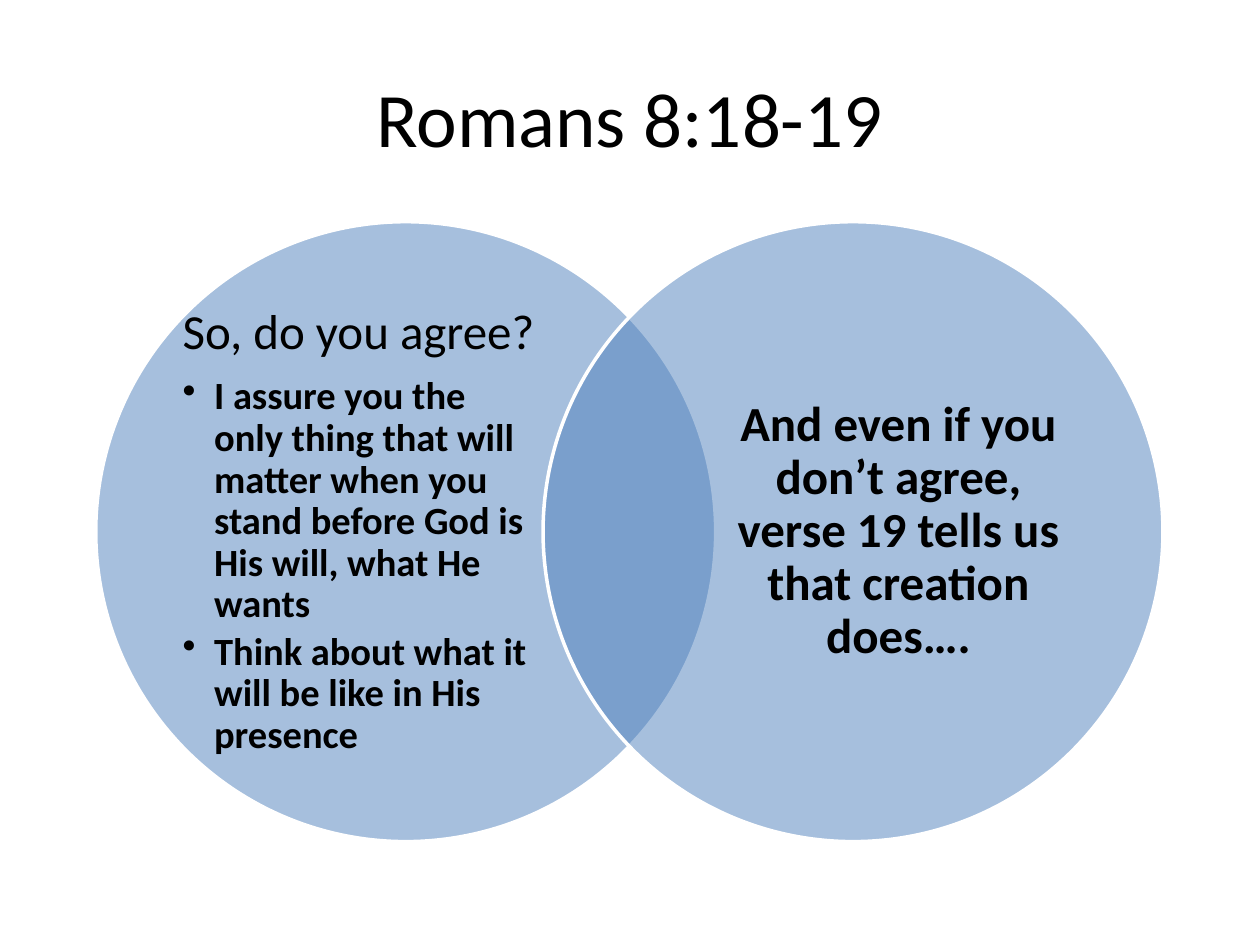
"""Build a slide with a two-circle Venn diagram on Romans 8:18-19."""
from lxml import etree
from pptx import Presentation
from pptx.dml.color import RGBColor
from pptx.enum.shapes import MSO_SHAPE
from pptx.enum.text import MSO_ANCHOR, PP_ALIGN
from pptx.oxml.ns import qn
from pptx.util import Pt

OVAL = MSO_SHAPE.OVAL
MIDDLE = MSO_ANCHOR.MIDDLE
LEFT, CENTER = PP_ALIGN.LEFT, PP_ALIGN.CENTER
BLACK = RGBColor(0x00, 0x00, 0x00)
WHITE = RGBColor(0xFF, 0xFF, 0xFF)
BLUE = RGBColor(0x4F, 0x81, 0xBD)


class Deck:
    font = "Calibri"
    color = BLACK
    indent = 18

    def __init__(self, prs):
        self.s = prs.slides.add_slide(prs.slide_layouts[6])

    def circle(self, x, y, d):
        sp = self.s.shapes.add_shape(OVAL, Pt(x), Pt(y), Pt(d), Pt(d))
        sp.shadow.inherit = False
        sp.fill.solid()
        sp.fill.fore_color.rgb = BLUE
        clr = sp.fill._xPr.find(qn("a:solidFill"))[0]
        etree.SubElement(clr, qn("a:alpha"), val="50000")
        sp.line.color.rgb = WHITE
        sp.line.width = Pt(2)

    def textbox(self, x, y, w, h):
        tf = self.s.shapes.add_textbox(Pt(x), Pt(y), Pt(w), Pt(h)).text_frame
        tf.word_wrap = True
        tf.vertical_anchor = MIDDLE
        tf.margin_left = tf.margin_top = tf.margin_right = tf.margin_bottom = 0
        return tf

    def paragraph(self, tf, text, size, bold=False, align=LEFT, spacing=0.9, after=0.35, bullet=False):
        p = tf.paragraphs[0]
        if p.runs:
            p = tf.add_paragraph()
        p.alignment = align
        p.line_spacing = spacing
        p.space_after = Pt(size * after)
        if bullet:
            p.level = 1
            pPr = p._p.get_or_add_pPr()
            pPr.set("marL", str(Pt(self.indent)))
            pPr.set("indent", str(-Pt(self.indent)))
            etree.SubElement(pPr, qn("a:buChar"), char="•")
        r = p.add_run()
        r.text = text
        r.font.name = self.font
        r.font.size = Pt(size)
        r.font.bold = bold
        r.font.color.rgb = self.color


def main():
    prs = Presentation()
    prs.slide_width, prs.slide_height = Pt(720), Pt(540)
    deck = Deck(prs)

    title = deck.textbox(36, 21.6, 648, 90)
    deck.paragraph(title, "Romans 8:18-19", 44, align=CENTER, spacing=1, after=0)

    top, diameter = 126.72, 354.24
    text_top, text_width, text_height = 168.48, 204.48, 270.72

    deck.circle(54.72, top, diameter)
    question = deck.textbox(104.4, text_top, text_width, text_height)
    deck.paragraph(question, "So, do you agree?", 28)
    for text in (
        "I assure you the only thing that will matter when you stand before God is His will, what He wants",
        "Think about what it will be like in His presence",
    ):
        deck.paragraph(question, text, 22, bold=True, after=0.15, bullet=True)

    deck.circle(310.32, top, diameter)
    answer = deck.textbox(411.12, text_top, text_width, text_height)
    deck.paragraph(answer, "And even if you don’t agree, verse 19 tells us that creation does….",
                   28, bold=True, align=CENTER)

    prs.save("out.pptx")


if __name__ == "__main__":
    main()
